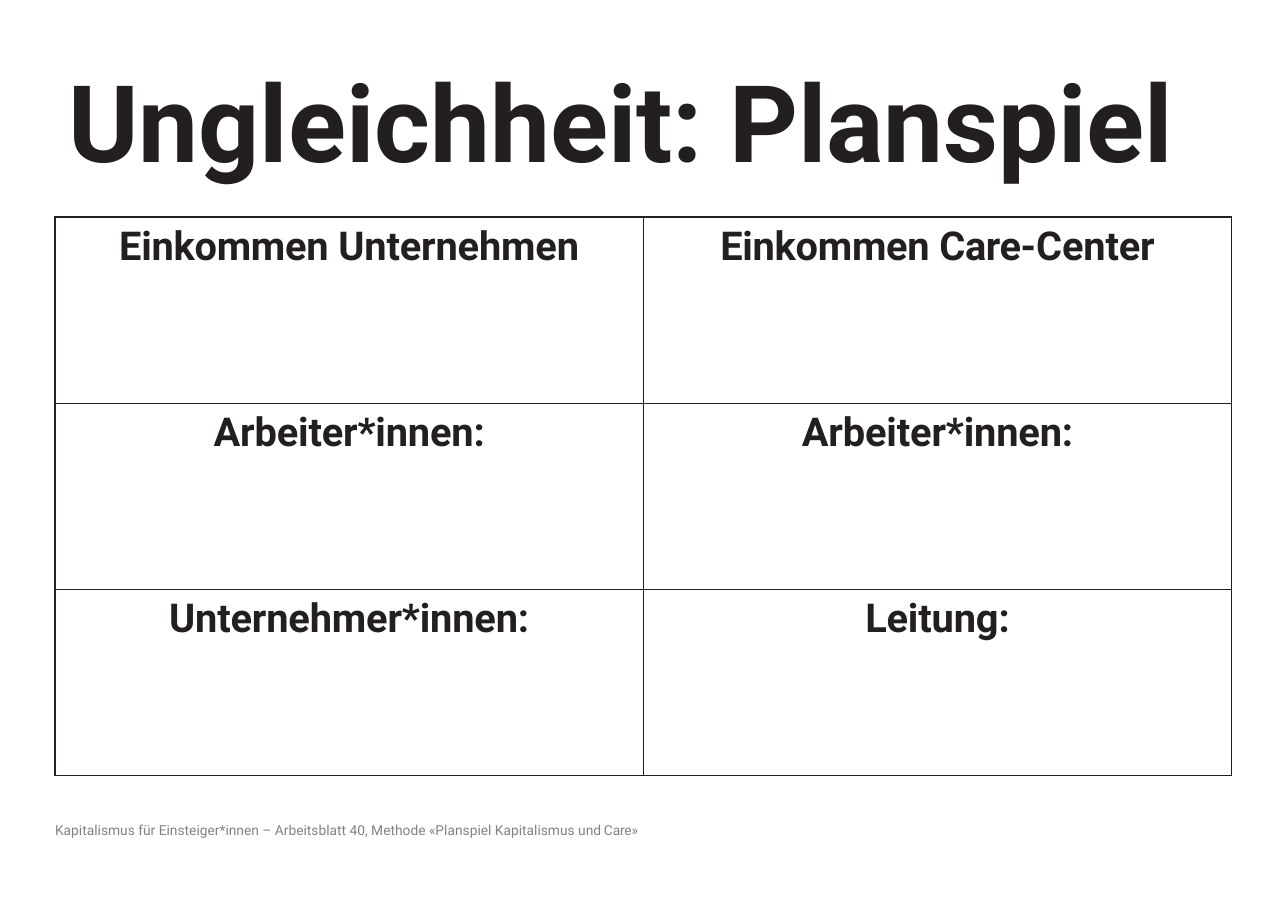
from lxml.etree import SubElement as Sub
from pptx import Presentation
from pptx.dml.color import RGBColor as Rgb
from pptx.enum.text import MSO_ANCHOR as Anchor, PP_ALIGN as Align
from pptx.oxml.ns import qn
from pptx.util import Inches, Pt

HEX = {"ink": "231F20", "gray": "808285"}
TITLE = [("Ungleichheit: ", 0), ("Planspiel", -10)]
FOOT = [
    ("Kapitalismus für Einsteiger*innen – Arbeitsblatt 40, Methode «Planspiel Kapitalismus und", 0),
    (" Care»", -10),
]
GRID = [
    [
        [("Einkommen ", -20), ("Unternehmen", -10)],
        [("Einkommen ", -20), ("Care-", -30), ("Center", -10)],
    ],
    [[("Arbeiter*innen:", -10)], [("Arbeiter*innen:", -10)]],
    [[("Unternehmer*innen:", -10)], [("Leitung:", -10)]],
]
FONTS = {
    "title": {"size": Pt(70), "bold": True, "name": "Roboto"},
    "cell": {"size": Pt(26), "bold": True, "name": "Roboto"},
    "foot": {"size": Pt(9), "bold": False, "name": "Roboto"},
}
BOXES = [
    (FOOT, "foot", "gray", (0.5, 7.45, 9.44, 0.17), 0.5),
    (TITLE, "title", "ink", (0.62, 0.49, 10.53, 1.19), 1),
]
PAD = {"margin_left": 0, "margin_right": 0, "margin_bottom": 0}
FLAT = {"first_row": False, "horz_banding": False}
LEFT, TOP, WIDE, HIGH = 0.5, 1.97, 5.34, 1.69


def apply(obj, values):
    for key, value in values.items():
        setattr(obj, key, value)


def write(frame, runs, kind, color, para):
    p = frame.paragraphs[0]
    apply(p, para)
    for text, gap in runs:
        run = p.add_run()
        run.text = text
        apply(run.font, FONTS[kind])
        run.font.color.rgb = Rgb.from_string(HEX[color])
        run.font._element.set("spc", str(gap))


def border(cell):
    props = cell._tc.get_or_add_tcPr()
    for side in ("lnL", "lnR", "lnT", "lnB"):
        line = Sub(props, qn("a:" + side), w=str(Pt(1)))
        fill = Sub(line, qn("a:solidFill"))
        Sub(fill, qn("a:srgbClr"), val=HEX["ink"])


def main():
    deck = Presentation()
    apply(deck, {"slide_width": Inches(11.69), "slide_height": Inches(8.27)})
    slide = deck.slides.add_slide(deck.slide_layouts[6])

    for runs, kind, color, place, space in BOXES:
        frame = slide.shapes.add_textbox(*map(Inches, place)).text_frame
        apply(frame, PAD | {"margin_top": Inches(0.01), "word_wrap": True})
        write(frame, runs, kind, color, {"space_before": Pt(space)})

    rows, cols = len(GRID), len(GRID[0])
    area = map(Inches, (LEFT, TOP, WIDE * cols, HIGH * rows))
    table = slide.shapes.add_table(rows, cols, *area).table
    apply(table, FLAT)
    for col in table.columns:
        col.width = Inches(WIDE)
    para = {"alignment": Align.CENTER, "space_before": Pt(4.5)}
    for r, line in enumerate(GRID):
        table.rows[r].height = Inches(HIGH)
        for c, runs in enumerate(line):
            cell = table.cell(r, c)
            apply(cell, PAD | {"margin_top": Inches(0.06), "vertical_anchor": Anchor.TOP})
            border(cell)
            cell.fill.background()
            write(cell.text_frame, runs, "cell", "ink", para)

    deck.save("out.pptx")


if __name__ == "__main__":
    main()
